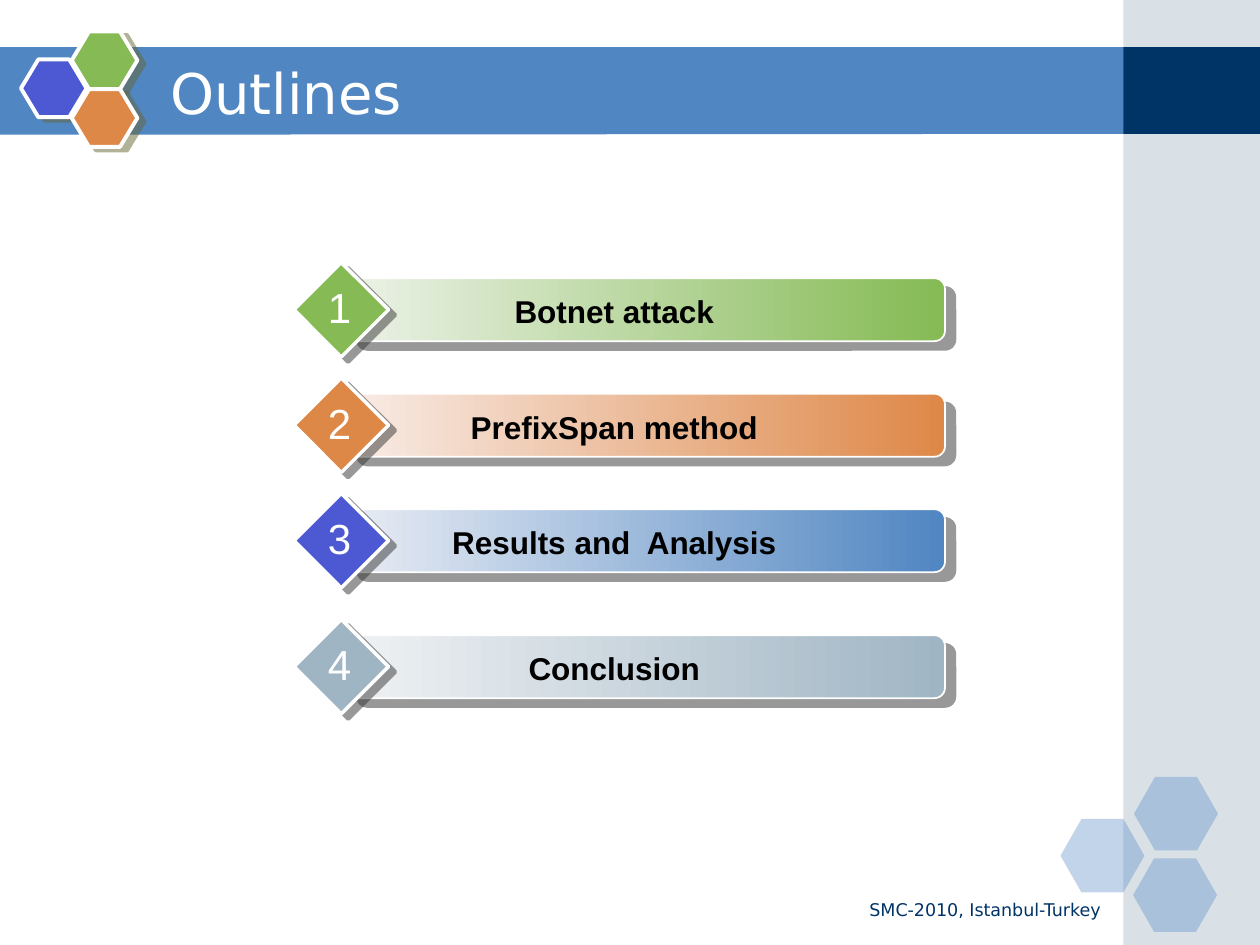
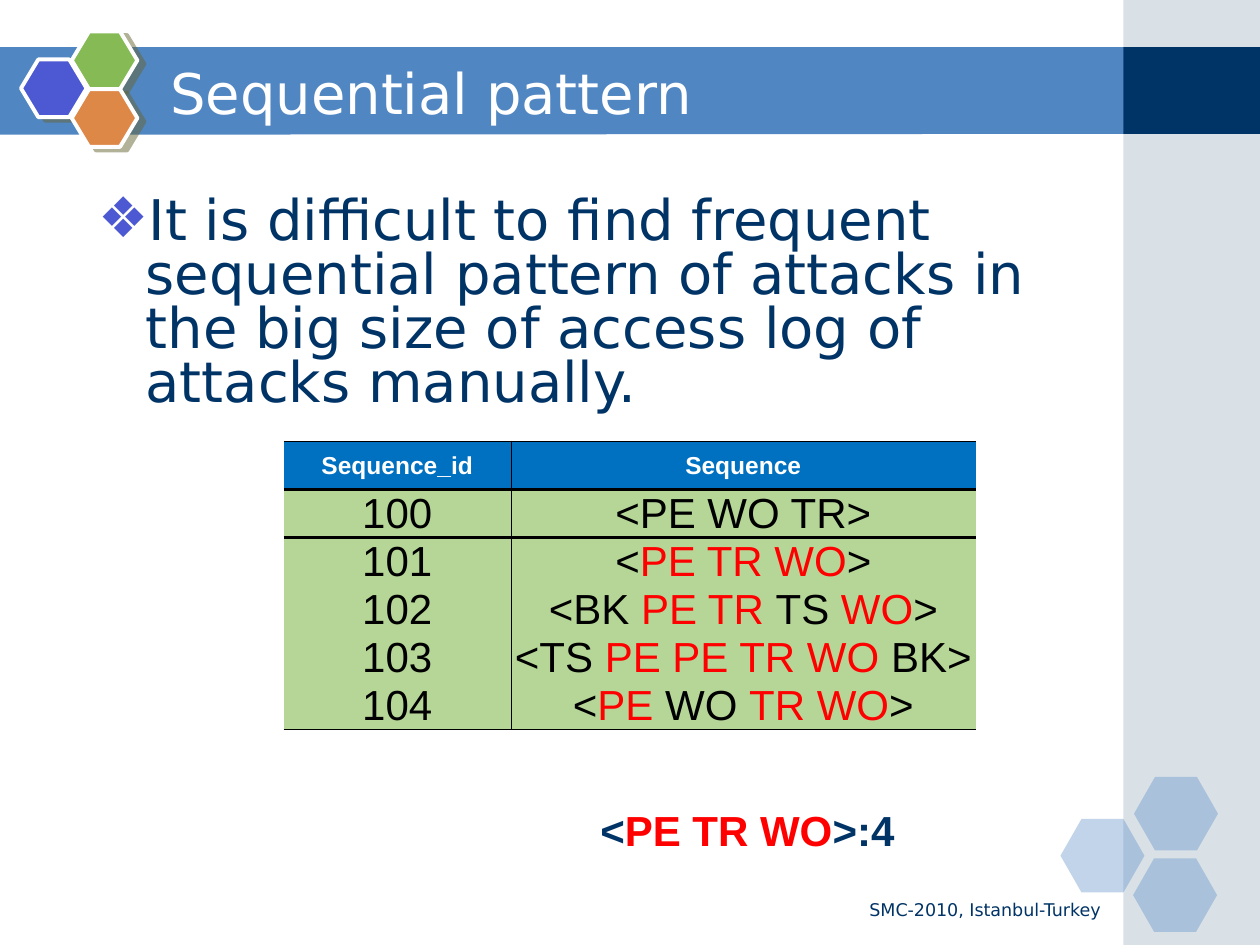
from lxml import etree
from pptx import Presentation
from pptx.dml.color import RGBColor
from pptx.enum.shapes import MSO_SHAPE
from pptx.enum.text import MSO_ANCHOR, MSO_AUTO_SIZE, PP_ALIGN
from pptx.oxml.ns import qn
from pptx.util import Pt

RECTANGLE, ROUNDED = MSO_SHAPE.RECTANGLE, MSO_SHAPE.ROUNDED_RECTANGLE
HEXAGON, DIAMOND = MSO_SHAPE.HEXAGON, MSO_SHAPE.DIAMOND
LEFT, CENTER, RIGHT = PP_ALIGN.LEFT, PP_ALIGN.CENTER, PP_ALIGN.RIGHT
MIDDLE, BOTTOM = MSO_ANCHOR.MIDDLE, MSO_ANCHOR.BOTTOM
NO_FIT, GROW = MSO_AUTO_SIZE.NONE, MSO_AUTO_SIZE.SHAPE_TO_FIT_TEXT
TITLE_ONLY, TITLE_AND_BODY = 5, 1

WHITE = RGBColor(0xFF, 0xFF, 0xFF)
BLACK = RGBColor(0, 0, 0)
RED = RGBColor(0xFF, 0, 0)
NAVY = RGBColor(0, 0x33, 0x66)
BLUE = RGBColor(0x50, 0x86, 0xC2)
VIOLET = RGBColor(0x4C, 0x59, 0xD2)
GREEN = RGBColor(0x85, 0xBA, 0x54)
ORANGE = RGBColor(0xDE, 0x88, 0x48)
GREY = RGBColor(0xA0, 0xB5, 0xC4)
PALE_GREEN = RGBColor(0xEC, 0xF2, 0xE8)
PALE_ORANGE = RGBColor(0xF8, 0xEC, 0xE7)
PALE_BLUE = RGBColor(0xE8, 0xEC, 0xF4)
PALE_GREY = RGBColor(0xEF, 0xF2, 0xF4)
HEADER_BLUE = RGBColor(0, 0x70, 0xC0)
CELL_GREEN = RGBColor(0xB6, 0xD6, 0x98)
OLIVE_SHADOW = RGBColor(0x66, 0x66, 0x33)
DARK_SHADOW = RGBColor(0x33, 0x33, 0x33)

SANS, ARIAL = "DejaVu Sans", "Arial"
NO_TABLE_STYLE = "{2D5ABB26-0587-4C30-8999-92F81FD0307C}"

# Agenda entry: top, label, marker colour, bar start colour, bar end colour
AGENDA = [
    (150, "Botnet attack", GREEN, PALE_GREEN, GREEN),
    (216, "PrefixSpan method", ORANGE, PALE_ORANGE, ORANGE),
    (282, "Results and  Analysis", VIOLET, PALE_BLUE, BLUE),
    (354, "Conclusion", GREY, PALE_GREY, GREY),
]

# Every second piece of a sequence is highlighted
SEQUENCES = [
    ("100", ["<PE WO TR>"]),
    ("101", ["<", "PE TR WO", ">"]),
    ("102", ["<BK ", "PE TR ", "TS ", "WO", ">"]),
    ("103", ["<TS ", "PE PE TR WO ", "BK>"]),
    ("104", ["<", "PE ", "WO ", "TR WO", ">"]),
]


def points(*lengths):
    return [Pt(length) for length in lengths]


def child(parent, tag, **attributes):
    return etree.SubElement(parent, qn(tag), attributes)


def place(shape, box):
    shape.left, shape.top, shape.width, shape.height = points(*box)


def write(paragraph, pieces, size, color, font=ARIAL, bold=False, align=LEFT):
    """Add one run per piece; every second piece is red."""
    paragraph.alignment = align
    for index, piece in enumerate(pieces):
        run = paragraph.add_run()
        run.text = piece
        run.font.name, run.font.size, run.font.bold = font, Pt(size), bold
        run.font.color.rgb = RED if index % 2 else color


def add_label(shapes, box, pieces, size, color, wrap=True, fit=GROW, **style):
    frame = shapes.add_textbox(*points(*box)).text_frame
    frame.word_wrap, frame.auto_size = wrap, fit
    write(frame.paragraphs[0], pieces, size, color, **style)


def add_panel(shapes, preset, box, color, opacity=100, adjust=None, outline=0):
    panel = shapes.add_shape(preset, *points(*box))
    panel.shadow.inherit = False
    panel.fill.solid()
    panel.fill.fore_color.rgb = color
    if opacity < 100:
        tint = panel.element.spPr.find(".//" + qn("a:srgbClr"))
        child(tint, "a:alpha", val=str(opacity * 1000))
    if adjust is not None:
        panel.adjustments[0] = adjust
    if outline:
        panel.line.color.rgb = WHITE
        panel.line.width = Pt(outline)
    else:
        panel.line.fill.background()
    return panel


def cast_shadow(shape, color, distance, angle):
    effects = shape.element.spPr.find(qn("a:effectLst"))
    shadow = child(effects, "a:outerShdw", blurRad="0", dist=str(Pt(distance)),
                   dir=str(angle * 60000), algn="ctr", rotWithShape="0")
    child(child(shadow, "a:srgbClr", val=str(color)), "a:alpha", val="50000")


def add_title_band(shapes):
    outline = shapes.build_freeform(Pt(-0.7), Pt(27))
    outline.add_line_segments([points(644, 27), points(644, 76.5), points(-0.7, 77)])
    band = outline.convert_to_shape()
    band.shadow.inherit = False
    band.fill.solid()
    band.fill.fore_color.rgb = BLUE
    band.line.fill.background()


def add_side_panel(shapes, left, width):
    add_panel(shapes, RECTANGLE, (left, 0, width, 540), GREY, opacity=40)
    add_panel(shapes, RECTANGLE, (left, 27, width, 49.5), NAVY)


def add_corner_hexagons(shapes, left, top):
    for dx, dy in [(0, 24), (42, 0), (41.5, 46.5)]:
        add_panel(shapes, HEXAGON, (left + dx, top + dy, 48, 42), BLUE,
                  opacity=35, adjust=0.286)


def add_emblem(shapes, left, top):
    for dx, dy, color in [(0, 16, VIOLET), (29, 0, GREEN), (29, 33, ORANGE)]:
        cell = add_panel(shapes, HEXAGON, (left + dx, top + dy, 37.5, 33), color,
                         adjust=0.3, outline=2.25)
        cast_shadow(cell, OLIVE_SHADOW, 4.5, 27)


def add_themed_slide(deck, layout, heading):
    """Add a slide with the shared decoration, footer and title."""
    slide = deck.slides.add_slide(deck.slide_layouts[layout])
    shapes = slide.shapes
    add_title_band(shapes)
    add_side_panel(shapes, 642, 78)
    add_corner_hexagons(shapes, 606, 444)
    add_emblem(shapes, 12, 18)
    add_label(shapes, (408, 510, 228, 18.5), ["SMC-2010, Istanbul-Turkey"], 10,
              NAVY, fit=NO_FIT, font=SANS, align=RIGHT)

    title = shapes.title
    place(title, (90, 30, 618, 45))
    frame = title.text_frame
    frame.vertical_anchor, frame.auto_size = MIDDLE, NO_FIT
    write(frame.paragraphs[0], [heading], 32, WHITE, font=SANS)
    title.element.getparent().append(title.element)  # in front of the band
    return slide


def add_agenda_item(slide, left, top, number, label, marker_color, start, end):
    shapes = slide.shapes.add_group_shape().shapes
    bar = add_panel(shapes, ROUNDED, (left + 30, top + 9, 342, 36), end,
                    adjust=0.167, outline=1)
    bar.fill.gradient()
    bar.fill.gradient_angle = 0
    for stop, color in zip(bar.fill.gradient_stops, (start, end)):
        stop.color.rgb = color
    cast_shadow(bar, DARK_SHADOW, 7.8, 40)

    marker = add_panel(shapes, DIAMOND, (left, top, 54, 54), marker_color, outline=2)
    cast_shadow(marker, DARK_SHADOW, 5, 37)
    add_label(shapes, (left + 48, top + 13.5, 270, 29), [label], 18, BLACK,
              bold=True, align=CENTER)
    add_label(shapes, (left + 12, top + 7.5, 28, 36), [str(number)], 24, WHITE,
              wrap=False, align=CENTER)


def fill_bullet(body, box, text):
    place(body, box)
    frame = body.text_frame
    frame.auto_size = NO_FIT
    bullet = frame.paragraphs[0]
    write(bullet, [text], 32, NAVY, font=SANS)
    bullet.line_spacing = 0.8
    bullet.space_before = Pt(6.4)
    properties = bullet.runs[0].font and bullet._p.get_or_add_pPr()
    properties.set("marL", str(Pt(27)))
    properties.set("indent", str(Pt(-27)))
    child(child(properties, "a:buClr"), "a:srgbClr", val=str(VIOLET))
    child(properties, "a:buFont", typeface=SANS)
    child(properties, "a:buChar", char="❖")


def set_borders(cell, widths):
    """Draw black borders; widths maps the side letters L, R, T, B to points."""
    properties = cell._tc.get_or_add_tcPr()
    sides = [side for side in "LRTB" if side in widths]
    for position, side in enumerate(sides):
        border = etree.Element(qn("a:ln" + side), w=str(Pt(widths[side])))
        child(child(border, "a:solidFill"), "a:srgbClr", val=str(BLACK))
        properties.insert(position, border)


def add_sequence_table(slide, left, top):
    rows = [("Sequence_id", ["Sequence"])] + SEQUENCES
    row_height, column_widths = 27.5, (130, 265.5)
    frame = slide.shapes.add_table(len(rows), 2, *points(
        left, top, sum(column_widths), row_height * len(rows)))
    table = frame.table
    table.horz_banding = False
    table._tbl.tblPr.find(qn("a:tableStyleId")).text = NO_TABLE_STYLE
    for column, width in zip(table.columns, column_widths):
        column.width = Pt(width)

    for r, (sequence_id, sequence) in enumerate(rows):
        table.rows[r].height = Pt(row_height)
        header = r == 0
        for c, pieces in enumerate(([sequence_id], sequence)):
            cell = table.cell(r, c)
            cell.margin_left = cell.margin_right = cell.margin_top = Pt(0.7)
            cell.margin_bottom = 0
            cell.vertical_anchor = MIDDLE if header else BOTTOM
            cell.fill.solid()
            cell.fill.fore_color.rgb = HEADER_BLUE if header else CELL_GREEN
            write(cell.text_frame.paragraphs[0], pieces, 14 if header else 24,
                  WHITE if header else BLACK, bold=header, align=CENTER)
            widths = {"L" if c else "R": 0.5}
            if header:
                widths.update(T=0.5, B=2)
            elif r == 1:
                widths.update(T=2)
            elif r == len(rows) - 1:
                widths.update(B=1)
            set_borders(cell, widths)


def build_outlines(deck):
    slide = add_themed_slide(deck, TITLE_ONLY, "Outlines")
    for number, (top, *entry) in enumerate(AGENDA, start=1):
        add_agenda_item(slide, 168, top, number, *entry)


def build_sequential_pattern(deck):
    slide = add_themed_slide(deck, TITLE_AND_BODY, "Sequential pattern")
    fill_bullet(slide.placeholders[1], (49, 109.5, 569.5, 137.5),
                "It is difficult to find frequent sequential pattern of attacks "
                "in the big size of access log of attacks manually.")
    add_sequence_table(slide, 162, 252)
    add_label(slide.shapes, (336, 456, 184.5, 36), ["<", "PE TR WO", ">:4"], 24,
              NAVY, wrap=False, bold=True)


def main():
    deck = Presentation()
    deck.slide_width, deck.slide_height = points(720, 540)
    build_outlines(deck)
    build_sequential_pattern(deck)
    deck.save("out.pptx")


if __name__ == "__main__":
    main()
